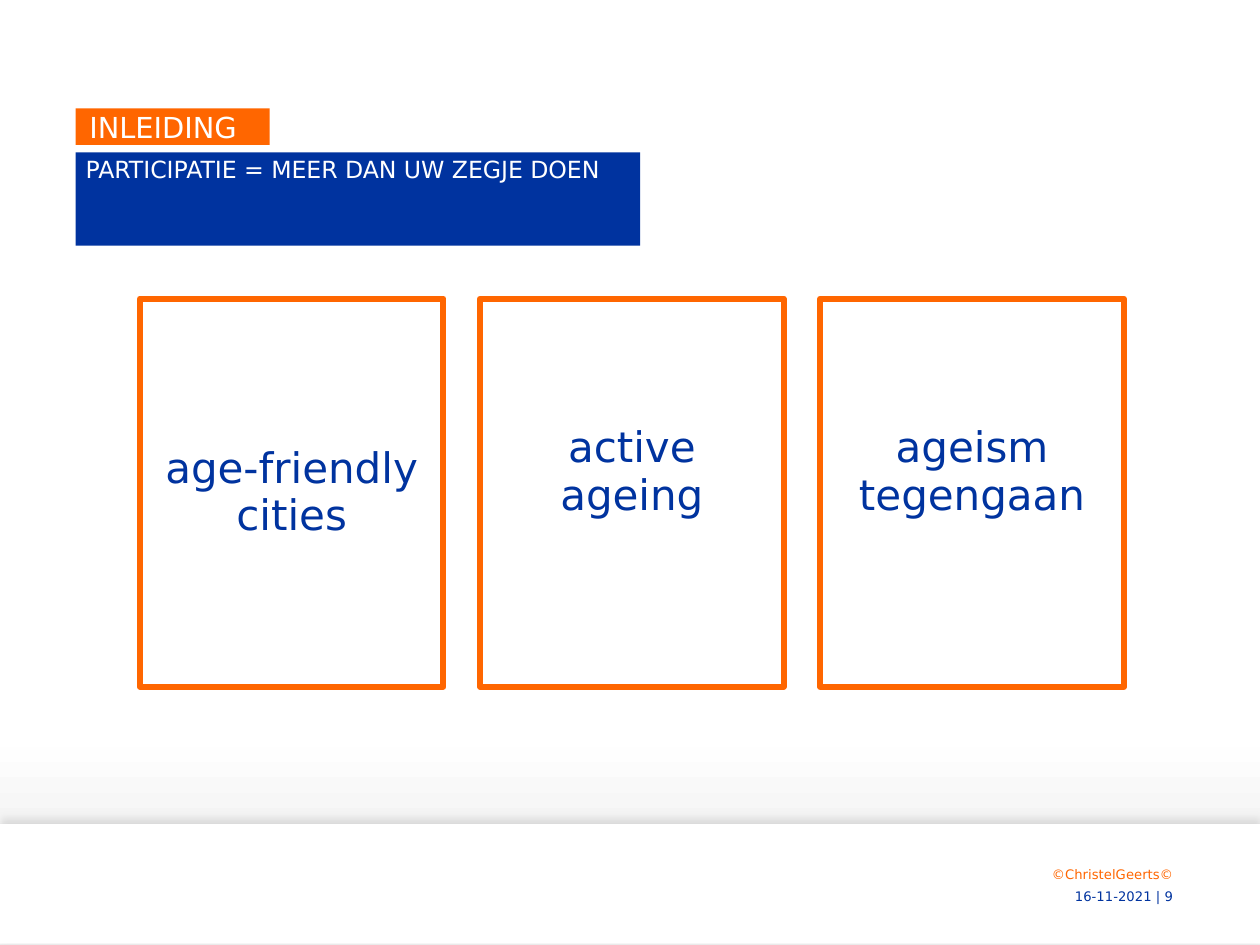
import pptx
import pptx.dml.color
import pptx.enum.shapes
import pptx.enum.text
import pptx.oxml
import pptx.oxml.ns
import pptx.util

Inches = pptx.util.Inches
Pt = pptx.util.Pt
ALIGN = pptx.enum.text.PP_ALIGN
ANCHOR = pptx.enum.text.MSO_ANCHOR

FONT = "DejaVu Sans"
COLORS = {"orange": "FF6600", "blue": "00339F", "white": "FFFFFF"}
BACKGROUND_STOPS = [(0, "FFFFFF"), (79, "FEFEFE"), (92, "EDEDED")]
CARDS = [  # text, bottom inset
    ("age-friendly cities", 0.12),
    ("active ageing", 0.44),
    ("ageism tegengaan", 0.44),
]


def rgb(name):
    return pptx.dml.color.RGBColor.from_string(COLORS[name])


def add_background(slide):
    fill = slide.background.fill
    fill.gradient()
    fill.gradient_angle = 270
    stops = slide.background._cSld.find(".//" + pptx.oxml.ns.qn("a:gsLst"))
    for stop in list(stops):
        stops.remove(stop)
    for position, color in BACKGROUND_STOPS:
        stops.append(pptx.oxml.parse_xml(
            f'<a:gs {pptx.oxml.ns.nsdecls("a")} pos="{position * 1000}">'
            f'<a:srgbClr val="{color}"/></a:gs>'))


def add_rectangle(slide, left, top, width, height):
    shape = slide.shapes.add_shape(
        pptx.enum.shapes.MSO_SHAPE.RECTANGLE,
        Inches(left), Inches(top), Inches(width), Inches(height))
    shape.shadow.inherit = False
    return shape


def fill_plain(shape, color):
    shape.fill.solid()
    shape.fill.fore_color.rgb = rgb(color)
    shape.line.fill.background()


def write(shape, text, size, color, align=ALIGN.LEFT, anchor=ANCHOR.MIDDLE,
          insets=(0, 0, 0, 0), spacing=1.0):
    """Set one paragraph; insets are left, top, right, bottom in inches."""
    frame = shape.text_frame
    frame.word_wrap = True
    frame.auto_size = pptx.enum.text.MSO_AUTO_SIZE.NONE
    frame.vertical_anchor = anchor
    (frame.margin_left, frame.margin_top,
     frame.margin_right, frame.margin_bottom) = map(Inches, insets)
    frame.text = text
    paragraph = frame.paragraphs[0]
    paragraph.alignment = align
    paragraph.line_spacing = spacing
    paragraph.font.name = FONT
    paragraph.font.size = Pt(size)
    paragraph.font.color.rgb = rgb(color)


def add_footer_band(slide):
    band = add_rectangle(slide, 0, 6.54, 10, 0.95)
    fill_plain(band, "white")
    effects = band._element.spPr.find(pptx.oxml.ns.qn("a:effectLst"))
    effects.append(pptx.oxml.parse_xml(
        f'<a:outerShdw {pptx.oxml.ns.nsdecls("a")} blurRad="{Pt(4)}" '
        f'dist="{Pt(3)}" dir="16200000" algn="b" rotWithShape="0">'
        '<a:srgbClr val="000000"><a:alpha val="10000"/></a:srgbClr>'
        '</a:outerShdw>'))


def add_footer_line(slide, text, top, height, color):
    line = slide.shapes.add_textbox(
        Inches(7.06), Inches(top), Inches(2.25), Inches(height))
    write(line, text, 7.5, color, align=ALIGN.RIGHT)


def add_card(slide, index, text, bottom_inset):
    card = add_rectangle(slide, 1.11 + index * 2.7, 2.37, 2.41, 3.08)
    card.fill.background()
    card.line.color.rgb = rgb("orange")
    card.line.width = Pt(3.5)
    write(card, text, 24, "blue", align=ALIGN.CENTER,
          insets=(0.15, 0.12, 0.15, bottom_inset), spacing=0.95)


def add_title(slide, text):
    title = slide.shapes.title
    title.left, title.top = Inches(0.6), Inches(0.86)
    title.width, title.height = Inches(1.54), Inches(0.29)
    fill_plain(title, "orange")
    write(title, text, 16.5, "white", anchor=ANCHOR.BOTTOM,
          insets=(0.11, 0.04, 0.16, 0), spacing=0.9)


def add_subtitle(slide, text):
    subtitle = add_rectangle(slide, 0.6, 1.21, 4.48, 0.74)
    fill_plain(subtitle, "blue")
    write(subtitle, text, 13.5, "white", anchor=ANCHOR.TOP,
          insets=(0.08, 0.04, 0.1, 0.04), spacing=0.95)


def main():
    deck = pptx.Presentation()
    deck.slide_width, deck.slide_height = Inches(10), Inches(7.5)
    slide = deck.slides.add_slide(deck.slide_layouts[5])
    add_background(slide)
    add_footer_band(slide)
    add_footer_line(slide, "©ChristelGeerts©", 6.85, 0.17, "orange")
    add_footer_line(slide, "16-11-2021 | 9", 7.02, 0.19, "blue")
    for index, (text, bottom_inset) in enumerate(CARDS):
        add_card(slide, index, text, bottom_inset)
    add_title(slide, "INLEIDING")
    add_subtitle(slide, "PARTICIPATIE = MEER DAN UW ZEGJE DOEN")
    deck.save("out.pptx")


if __name__ == "__main__":
    main()
